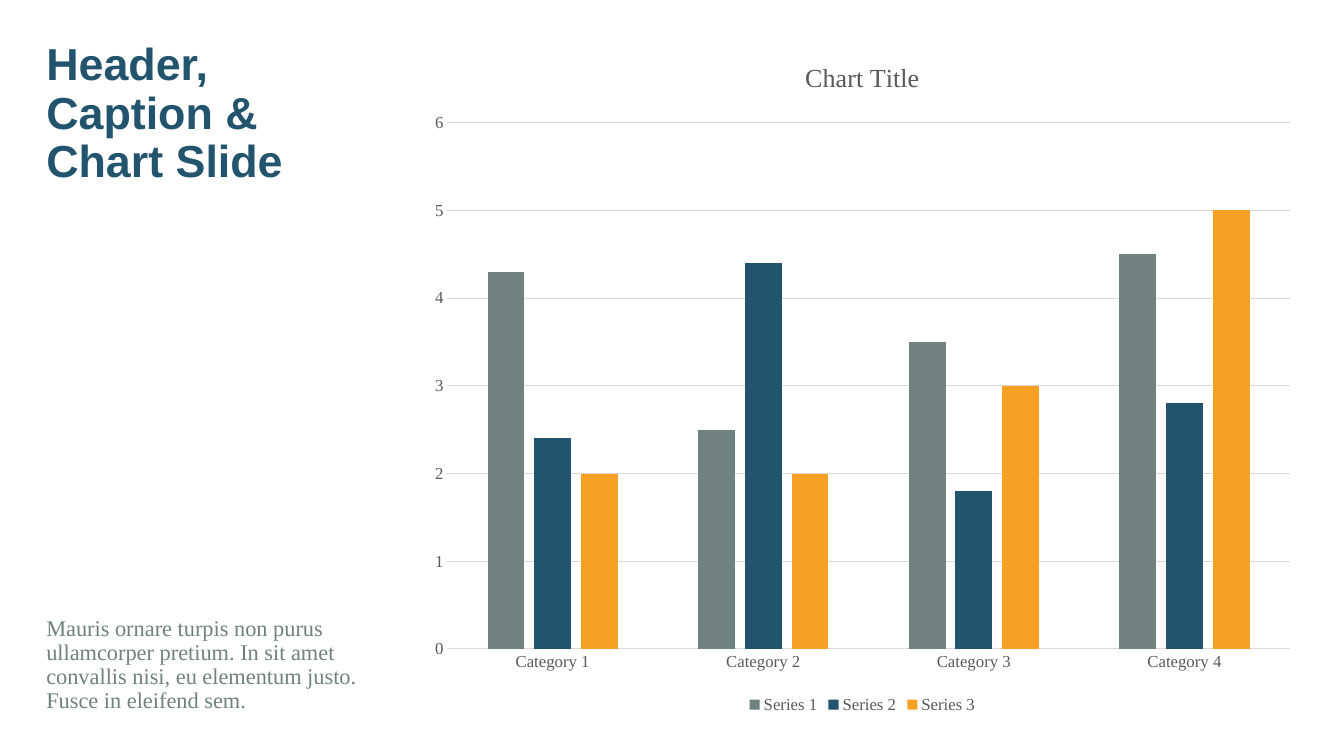
from pptx import Presentation
from pptx.chart.data import CategoryChartData
from pptx.dml.color import RGBColor
from pptx.enum.chart import XL_CHART_TYPE as ChartType
from pptx.enum.chart import XL_LEGEND_POSITION as LegendPosition
from pptx.enum.chart import XL_TICK_MARK as TickMark
from pptx.enum.text import MSO_ANCHOR as Anchor
from pptx.util import Pt

NAVY = RGBColor(0x22, 0x54, 0x6E)
SAGE = RGBColor(0x6F, 0x82, 0x80)
ORANGE = RGBColor(0xF6, 0xA1, 0x24)
GRAY = RGBColor(0x59, 0x59, 0x59)
GRID = RGBColor(0xD9, 0xD9, 0xD9)

CATEGORIES = [f"Category {number}" for number in range(1, 5)]
SERIES = [
    ("Series 1", (4.3, 2.5, 3.5, 4.5), SAGE),
    ("Series 2", (2.4, 4.4, 1.8, 2.8), NAVY),
    ("Series 3", (2, 2, 3, 5), ORANGE),
]


def set_font(font, name, size, color, bold=False):
    font.name = name
    font.size = Pt(size)
    font.color.rgb = color
    font.bold = bold


def write(frame, text, *, font, size, color, bold=False, spacing=None, before=None):
    para = frame.paragraphs[0]
    para.line_spacing = spacing
    if before is not None:
        para.space_before = Pt(before)
    span = para.add_run()
    span.text = text
    set_font(span.font, font, size, color, bold)


class SlideBuilder:
    heading_font = "Arial"
    body_font = "Times New Roman"

    def __init__(self, page):
        self.page = page

    def text(self, place, text, anchor=Anchor.TOP, **style):
        box = self.page.shapes.add_textbox(*map(Pt, place))
        frame = box.text_frame
        frame.word_wrap = True
        frame.vertical_anchor = anchor
        write(frame, text, spacing=0.9, **style)

    def style_axis(self, axis):
        axis.major_tick_mark = TickMark.NONE
        axis.minor_tick_mark = TickMark.NONE
        set_font(axis.tick_labels.font, self.body_font, 12, GRAY)

    def style_line(self, line):
        line.color.rgb = GRID
        line.width = Pt(0.75)

    def column_chart(self, place, title, categories, series):
        data = CategoryChartData()
        data.categories = categories
        for name, values, _ in series:
            data.add_series(name, values)
        chart = self.page.shapes.add_chart(
            ChartType.COLUMN_CLUSTERED, *map(Pt, place), data
        ).chart
        set_font(chart.font, self.body_font, 12, GRAY)

        chart.has_title = True
        write(chart.chart_title.text_frame, title,
              font=self.body_font, size=18.6, color=GRAY)
        chart.chart_title.include_in_layout = False

        chart.has_legend = True
        chart.legend.position = LegendPosition.BOTTOM
        chart.legend.include_in_layout = False
        set_font(chart.legend.font, self.body_font, 12, GRAY)

        self.style_axis(chart.category_axis)
        self.style_line(chart.category_axis.format.line)
        values_axis = chart.value_axis
        self.style_axis(values_axis)
        values_axis.minimum_scale = 0
        values_axis.maximum_scale = 6
        values_axis.major_unit = 1
        values_axis.format.line.fill.background()
        self.style_line(values_axis.major_gridlines.format.line)

        plot = chart.plots[0]
        plot.gap_width = 219
        plot.overlap = -27
        plot.vary_by_categories = False
        for bars, (_, _, color) in zip(plot.series, series):
            bars.format.fill.solid()
            bars.format.fill.fore_color.rgb = color
            bars.invert_if_negative = False


def main():
    deck = Presentation()
    deck.slide_width, deck.slide_height = Pt(960), Pt(540)
    builder = SlideBuilder(deck.slides.add_slide(deck.slide_layouts[6]))
    builder.column_chart((298, 26.6, 636, 486), "Chart Title", CATEGORIES, SERIES)
    builder.text((26, 26.6, 255, 273), "Header, Caption & Chart Slide",
                 font=builder.heading_font, size=32, color=NAVY, bold=True)
    builder.text((26, 299.6, 255, 213.6),
                 "Mauris ornare turpis non purus ullamcorper pretium. In sit amet "
                 "convallis nisi, eu elementum justo. Fusce in eleifend sem.",
                 anchor=Anchor.BOTTOM, font=builder.body_font, size=16,
                 color=SAGE, before=10)
    deck.save("out.pptx")


if __name__ == "__main__":
    main()
